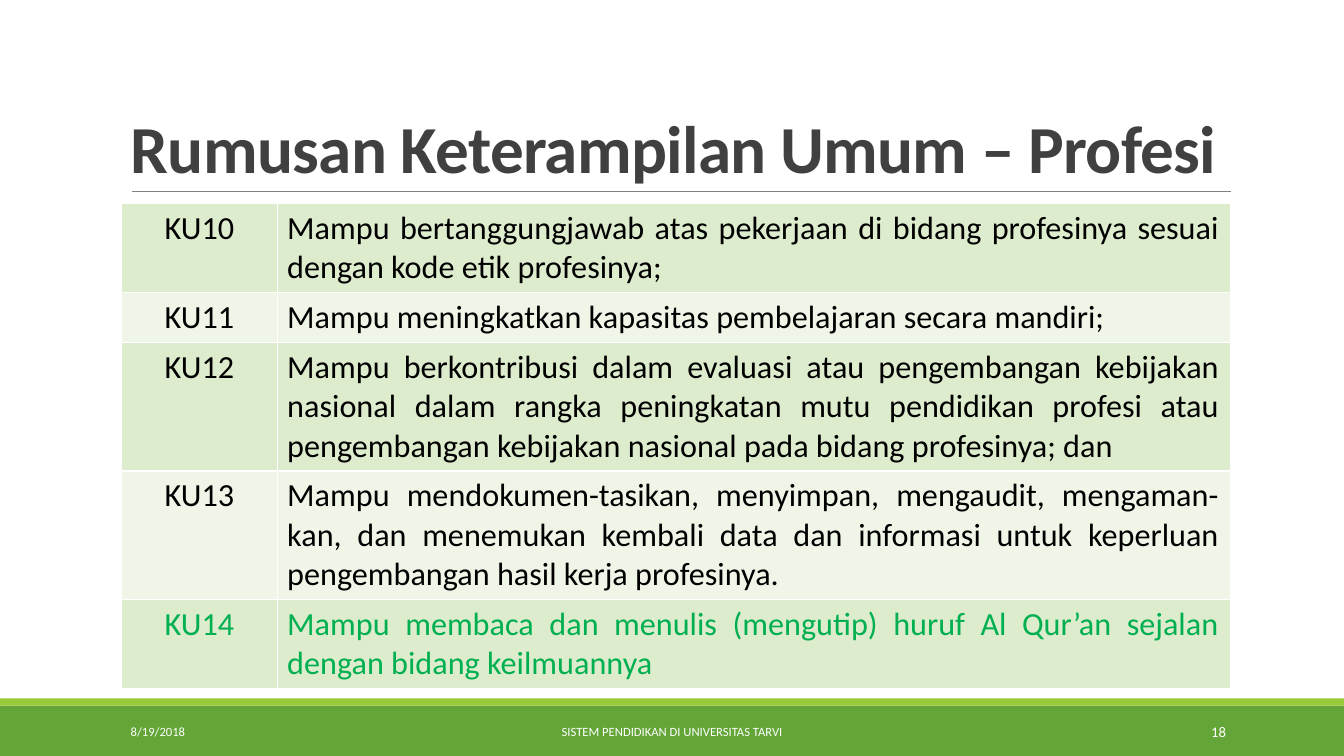
import dataclasses

import lxml.etree
import pptx
import pptx.dml.color
import pptx.enum.shapes
import pptx.enum.text
import pptx.oxml.ns
import pptx.util

SCALE = 9525  # EMU in one px, 96 px to the inch
FONT = "Calibri"
COLORS = {
    "green": "63A537", "lime": "99CB38", "rule": "808080",
    "title": "404040", "text": "000000", "mark": "00B050",
    "white": "FFFFFF", "dark": "DEECCE", "light": "EFF6E8",
}
ALIGN = pptx.enum.text.PP_ALIGN
ANCHOR = pptx.enum.text.MSO_ANCHOR


@dataclasses.dataclass
class Bar:
    top: int
    height: int
    color: str


@dataclasses.dataclass
class Note:
    left: int
    width: int
    text: str
    size: float
    align: ALIGN


@dataclasses.dataclass
class Row:
    code: str
    text: str
    height: int
    color: str = "text"


BARS = [Bar(672, 48, "green"), Bar(665, 7, "lime")]
NOTES = [
    Note(115, 259, "8/19/2018", 9, ALIGN.LEFT),
    Note(387, 506, "SISTEM PENDIDIKAN DI UNIVERSITAS TARVI", 9, ALIGN.CENTER),
    Note(1040, 137, "18", 10.5, ALIGN.RIGHT),
]
ROWS = [
    Row("KU10", "Mampu bertanggungjawab atas pekerjaan di bidang profesinya "
        "sesuai dengan kode etik profesinya;", 84),
    Row("KU11", "Mampu meningkatkan kapasitas pembelajaran secara mandiri;", 47),
    Row("KU12", "Mampu berkontribusi dalam evaluasi atau pengembangan "
        "kebijakan nasional dalam rangka peningkatan mutu pendidikan profesi "
        "atau pengembangan kebijakan nasional pada bidang profesinya; dan", 122),
    Row("KU13", "Mampu mendokumen-tasikan, menyimpan, mengaudit, mengaman-kan, "
        "dan menemukan kembali data dan informasi untuk keperluan "
        "pengembangan hasil kerja profesinya.", 122),
    Row("KU14", "Mampu membaca dan menulis (mengutip) huruf Al Qur’an sejalan "
        "dengan bidang keilmuannya", 84, "mark"),
]
COLS = [148, 908]


def px(count: int) -> int:
    return pptx.util.Emu(count * SCALE)


def tint(name: str) -> pptx.dml.color.RGBColor:
    return pptx.dml.color.RGBColor.from_string(COLORS[name])


def style(para, size: float, color: str, align: ALIGN) -> None:
    para.alignment = align
    para.font.name = FONT
    para.font.size = pptx.util.Pt(size)
    para.font.color.rgb = tint(color)


def draw_bar(slide, bar: Bar) -> None:
    shape = slide.shapes.add_shape(
        pptx.enum.shapes.MSO_SHAPE.RECTANGLE,
        0, px(bar.top), px(1280), px(bar.height))
    shape.shadow.inherit = False
    shape.fill.solid()
    shape.fill.fore_color.rgb = tint(bar.color)
    shape.line.fill.background()


def draw_rule(slide) -> None:
    line = slide.shapes.add_connector(
        pptx.enum.shapes.MSO_CONNECTOR.STRAIGHT,
        px(126), px(182), px(1172), px(182))
    line.line.color.rgb = tint("rule")
    line.line.width = pptx.util.Pt(0.5)
    lxml.etree.SubElement(line._element.spPr, pptx.oxml.ns.qn("a:effectLst"))


def draw_title(slide) -> None:
    title = slide.shapes.title
    title.left, title.top = px(115), px(30)
    title.width, title.height = px(1056), px(153)
    frame = title.text_frame
    frame.text = "Rumusan Keterampilan Umum – Profesi"
    frame.word_wrap = True
    frame.auto_size = pptx.enum.text.MSO_AUTO_SIZE.NONE
    frame.vertical_anchor = ANCHOR.BOTTOM
    para = frame.paragraphs[0]
    style(para, 48, "title", ALIGN.LEFT)
    para.font.bold = True
    para.line_spacing = 0.85
    para.runs[0]._r.get_or_add_rPr().set("spc", "-50")


def draw_note(slide, note: Note) -> None:
    box = slide.shapes.add_textbox(
        px(note.left), px(678), px(note.width), px(38))
    frame = box.text_frame
    frame.word_wrap = True
    frame.vertical_anchor = ANCHOR.MIDDLE
    frame.text = note.text
    style(frame.paragraphs[0], note.size, "white", note.align)


def add_edges(cell) -> None:
    props = cell._tc.get_or_add_tcPr()
    for place, side in enumerate(("lnL", "lnR", "lnT", "lnB")):
        edge = lxml.etree.Element(pptx.oxml.ns.qn(f"a:{side}"), w="12700")
        fill = lxml.etree.SubElement(edge, pptx.oxml.ns.qn("a:solidFill"))
        lxml.etree.SubElement(
            fill, pptx.oxml.ns.qn("a:srgbClr"), val=COLORS["white"])
        props.insert(place, edge)


def draw_table(slide) -> None:
    table = slide.shapes.add_table(
        len(ROWS), len(COLS), px(116), px(194),
        px(sum(COLS)), px(sum(row.height for row in ROWS))).table
    table.first_row = False
    table.horz_banding = False
    for col, width in zip(table.columns, COLS):
        col.width = px(width)
    for index, row in enumerate(ROWS):
        table.rows[index].height = px(row.height)
        parts = ((row.code, ALIGN.CENTER), (row.text, ALIGN.JUSTIFY))
        for col, (text, align) in enumerate(parts):
            cell = table.cell(index, col)
            cell.text = text
            cell.fill.solid()
            cell.fill.fore_color.rgb = tint("light" if index % 2 else "dark")
            style(cell.text_frame.paragraphs[0], 23, row.color, align)
            add_edges(cell)


def main() -> None:
    deck = pptx.Presentation()
    deck.slide_width, deck.slide_height = px(1280), px(720)
    slide = deck.slides.add_slide(deck.slide_layouts.get_by_name("Title Only"))
    # Frame and heading
    for bar in BARS:
        draw_bar(slide, bar)
    draw_rule(slide)
    draw_title(slide)
    # Skills
    draw_table(slide)
    # Footer
    for note in NOTES:
        draw_note(slide, note)
    deck.save("out.pptx")


if __name__ == "__main__":
    main()
